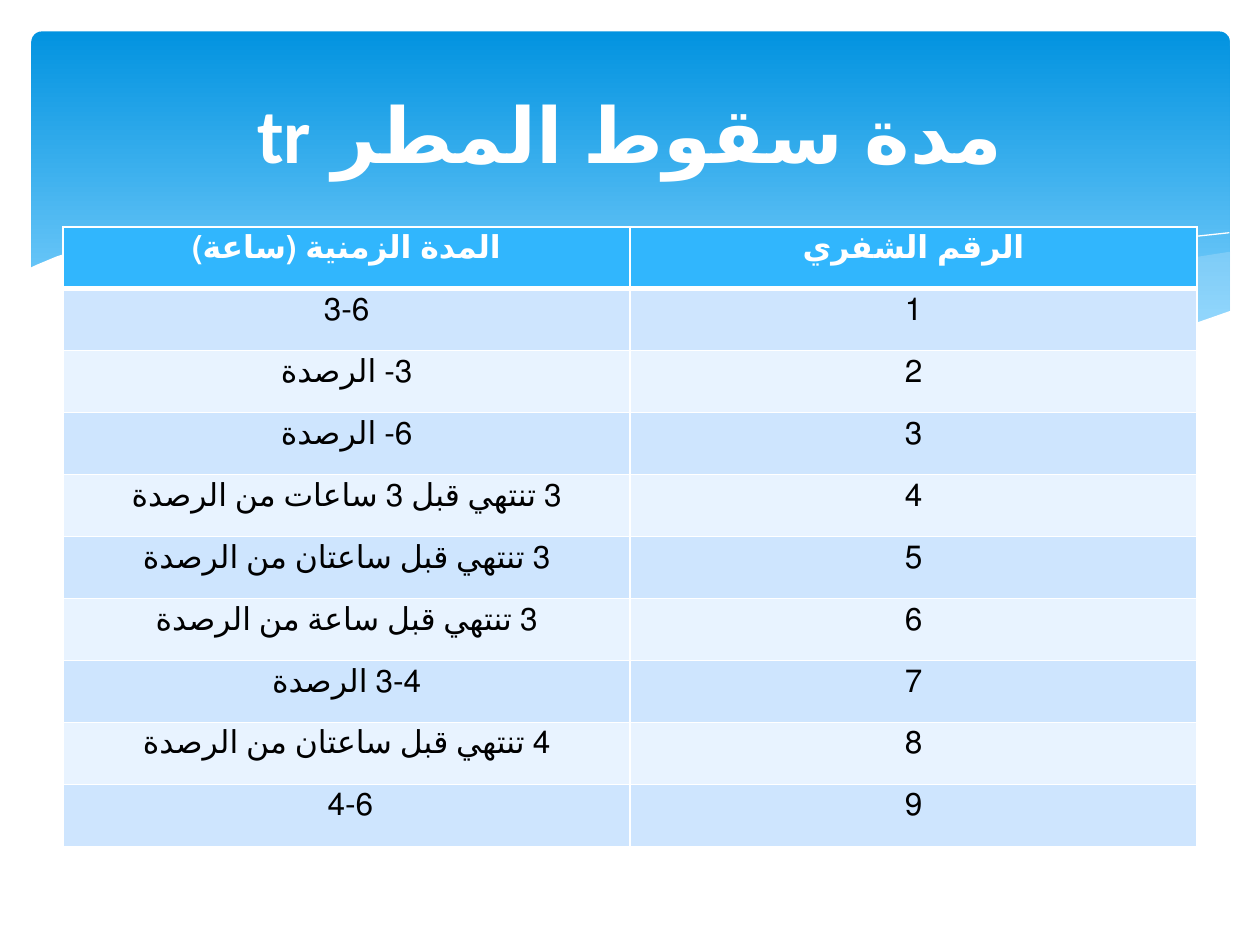
from lxml.etree import SubElement
from pptx import Presentation
from pptx.dml.color import RGBColor
from pptx.enum.lang import MSO_LANGUAGE_ID
from pptx.enum.shapes import MSO_SHAPE
from pptx.enum.text import MSO_ANCHOR, PP_ALIGN
from pptx.oxml import parse_xml
from pptx.oxml.ns import nsdecls, qn
from pptx.util import Pt

WHITE = RGBColor(0xFF, 0xFF, 0xFF)
BLACK = RGBColor(0x00, 0x00, 0x00)
DEEP_BLUE = RGBColor(0x02, 0x93, 0xE0)
LIGHT_BLUE = RGBColor(0x83, 0xD3, 0xFE)
WAVE_BLUE = RGBColor(0xC6, 0xE7, 0xFC)
HEADER_BLUE = RGBColor(0x31, 0xB6, 0xFD)
BANDS = (RGBColor(0xCE, 0xE5, 0xFE), RGBColor(0xE8, 0xF3, 0xFF))
FONT = "Calibri"

RIGHT_WAVE = [
    (226, 0), (207, 3), (187, 7), (166, 11.5), (144, 16.5), (104, 26.6), (66, 34.6),
    (32, 41), (0, 47), (32, 51), (60, 54), (86, 55.4), (110, 56), (132, 55.4), (152, 54),
    (170, 50.5), (187, 47), (202, 42.5), (217, 37.5), (227, 34), (227, 0),
]
MIDDLE_WAVE = [
    (437, 63.5), (397, 57.5), (352, 50), (302, 39.6), (247, 26.6), (214, 18.7), (184, 13),
    (155, 8), (129, 4.3), (96, 1.4), (68, 0), (42, 0.7), (19.5, 2.2), (0, 4.3), (40, 10),
    (85, 18.7), (117, 26.6), (176, 39.6), (227, 50), (273, 58), (314, 64), (351, 66),
    (383, 67), (411, 66),
]
LONG_CURVE = [
    (0, 6), (14, 4), (32, 1.5), (66, 0), (102, 0.7), (145, 4), (197, 9.4), (235, 15),
    (278, 23), (325, 33), (376, 46), (430.5, 61),
]
SHORT_CURVE = [(0, 52), (59, 35), (97, 27), (139, 18), (193, 8), (224, 3.6), (261, 0)]
WHITE_WAVE = [
    (687, 44.6), (667, 52), (646, 58.3), (622, 63), (595, 66), (566, 67), (531, 66),
    (493, 62), (450, 56), (400, 47.5), (345.6, 35.3), (305, 26), (246, 13), (194, 4.3),
    (149, 0.7), (111, 0), (78.5, 1.4), (52, 5), (31.7, 9.4), (16.5, 13.7), (4.3, 18.7),
    (0, 21), (0, 104.4), (687, 104.4),
]

TITLE = "مدة سقوط المطر tr"
HEADERS = ("المدة الزمنية (ساعة)", "الرقم الشفري")
DURATIONS = [
    "3-6",
    "3- الرصدة",
    "6- الرصدة",
    "3 تنتهي قبل 3 ساعات من الرصدة",
    "3 تنتهي قبل ساعتان من الرصدة",
    "3 تنتهي قبل ساعة من الرصدة",
    "3-4 الرصدة",
    "4 تنتهي قبل ساعتان من الرصدة",
    "4-6 ",
]


def write_text(text_frame, text, size, color, bold):
    """Write one centred right-to-left paragraph in Arabic."""
    paragraph = text_frame.paragraphs[0]
    paragraph.text = text
    paragraph.alignment = PP_ALIGN.CENTER
    paragraph._p.get_or_add_pPr().set("rtl", "1")
    paragraph.font.name = FONT
    paragraph.font.size = Pt(size)
    paragraph.font.bold = bold
    paragraph.font.color.rgb = color
    paragraph.runs[0].font.language_id = MSO_LANGUAGE_ID.ARABIC_IRAQ


def add_outline(slide, left, top, points, closed):
    """Draw a freeform from points given relative to its top left corner."""
    builder = slide.shapes.build_freeform(*points[0], scale=Pt(1))
    builder.add_line_segments(points[1:], close=closed)
    shape = builder.convert_to_shape(Pt(left), Pt(top))
    shape.shadow.inherit = False
    return shape


def add_wave(slide, left, top, points, color, opacity=100):
    """Draw a filled wave without an outline."""
    shape = add_outline(slide, left, top, points, True)
    shape.line.fill.background()
    shape.fill.solid()
    shape.fill.fore_color.rgb = color
    if opacity < 100:
        color_element = shape._element.spPr.find(qn("a:solidFill"))[0]
        SubElement(color_element, qn("a:alpha")).set("val", str(opacity * 1000))


def add_curve(slide, left, top, points):
    """Draw a white hairline curve."""
    shape = add_outline(slide, left, top, points, False)
    shape.fill.background()
    shape.line.color.rgb = WHITE
    shape.line.width = Pt(0)


def add_banner(slide, left, top, width, height):
    """Draw the gradient banner with the waves along its lower edge."""
    banner = slide.shapes.add_shape(
        MSO_SHAPE.ROUNDED_RECTANGLE, Pt(left), Pt(top), Pt(width), Pt(height))
    banner.adjustments[0] = 0.03
    banner.shadow.inherit = False
    banner.line.fill.background()
    banner.fill.gradient()
    banner.fill.gradient_angle = 270
    for stop, position, color in zip(
            banner.fill.gradient_stops, (0, 0.9), (DEEP_BLUE, LIGHT_BLUE)):
        stop.position = position
        stop.color.rgb = color
    add_wave(slide, left + 458, top + 126, RIGHT_WAVE, WAVE_BLUE, 29)
    add_wave(slide, left + 188, top + 115, MIDDLE_WAVE, WAVE_BLUE, 40)
    add_curve(slide, left + 204.5, top + 116.6, LONG_CURVE)
    add_curve(slide, left + 423.5, top + 115, SHORT_CURVE)
    add_wave(slide, left - 1.5, top + 114.5, WHITE_WAVE, WHITE)


def set_borders(cell, top, bottom):
    """Give a cell white borders, with the top and bottom widths in points."""
    properties = cell._tc.get_or_add_tcPr()
    widths = {"lnL": 1, "lnR": 1, "lnT": top, "lnB": bottom}
    for index, (side, width) in enumerate(widths.items()):
        properties.insert(index, parse_xml(
            f'<a:{side} {nsdecls("a")} w="{Pt(width)}"><a:solidFill>'
            f'<a:srgbClr val="{WHITE}"/></a:solidFill></a:{side}>'))


def add_code_table(slide, left, top, width, height):
    """Place the table of durations and their code numbers."""
    rows = [HEADERS]
    rows += [(duration, str(code)) for code, duration in enumerate(DURATIONS, 1)]
    table = slide.shapes.add_table(
        len(rows), len(HEADERS), Pt(left), Pt(top), Pt(width), Pt(height)).table
    for row_index, texts in enumerate(rows):
        is_header = row_index == 0
        for column_index, text in enumerate(texts):
            cell = table.cell(row_index, column_index)
            cell.fill.solid()
            cell.fill.fore_color.rgb = HEADER_BLUE if is_header else BANDS[(row_index - 1) % 2]
            write_text(cell.text_frame, text, 18, WHITE if is_header else BLACK, is_header)
            set_borders(cell, 3 if row_index == 1 else 1, 3 if is_header else 1)


def add_title(slide, left, top, width, height):
    """Place the slide title."""
    text_frame = slide.shapes.add_textbox(
        Pt(left), Pt(top), Pt(width), Pt(height)).text_frame
    text_frame.word_wrap = True
    text_frame.vertical_anchor = MSO_ANCHOR.MIDDLE
    write_text(text_frame, TITLE, 44, WHITE, True)


def main():
    """Build and save the presentation."""
    presentation = Presentation()
    presentation.slide_width = Pt(720)
    presentation.slide_height = Pt(540)
    slide = presentation.slides.add_slide(presentation.slide_layouts[6])
    add_banner(slide, 18, 18, 684.7, 194.4)
    add_code_table(slide, 36, 129.6, 648, 354.3)
    add_title(slide, 36, 26.6, 648, 98.6)
    presentation.save("out.pptx")


if __name__ == "__main__":
    main()
